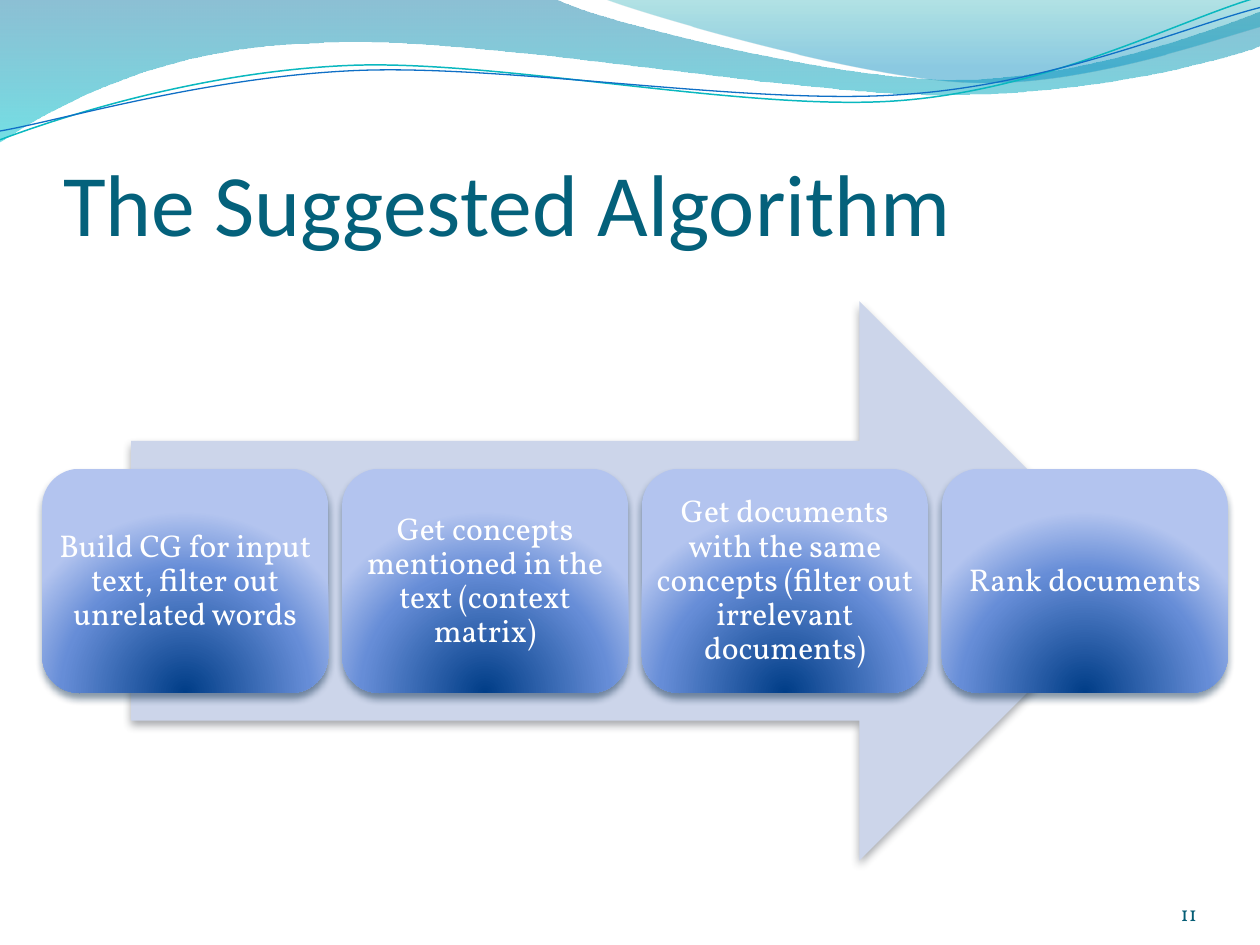
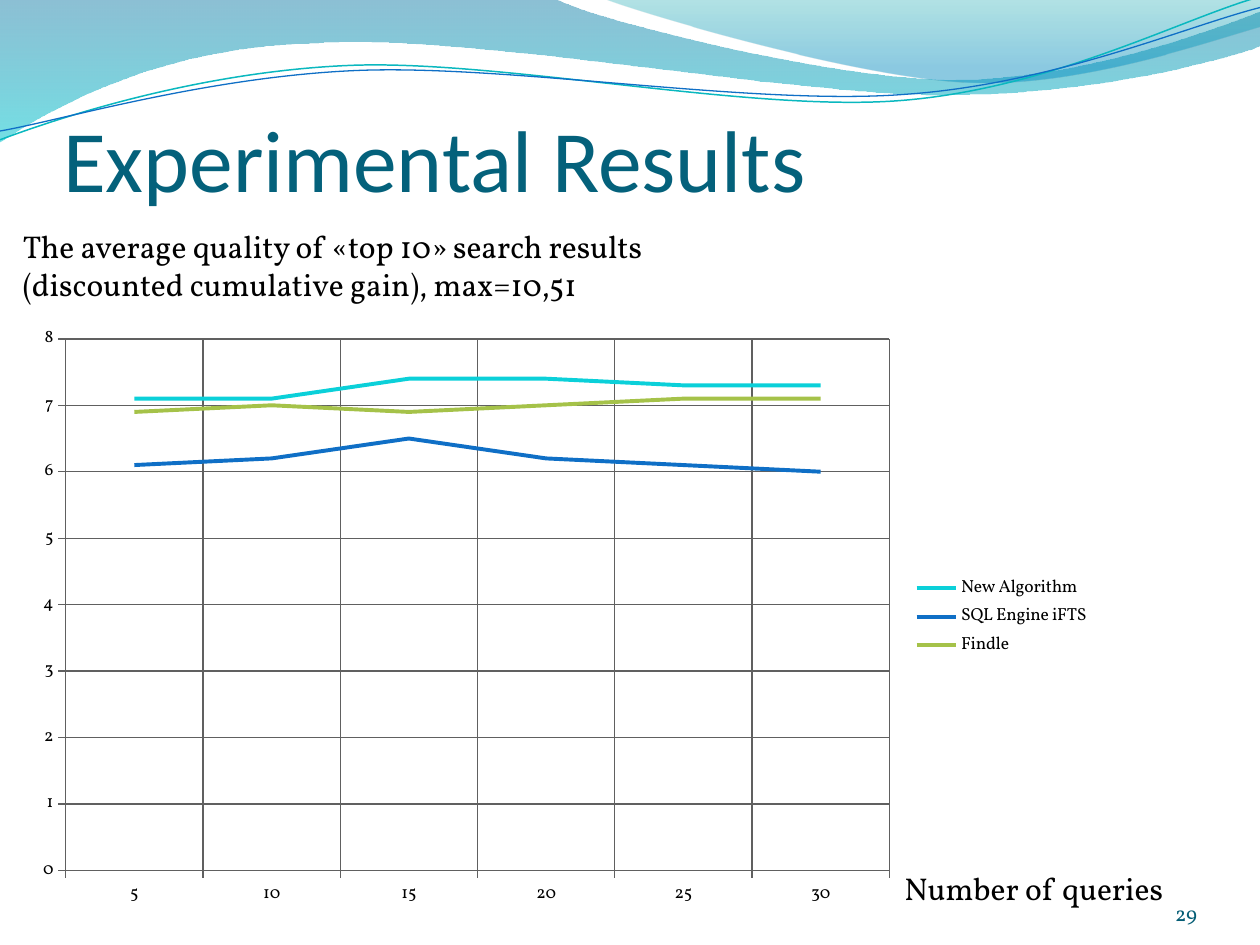
from lxml import etree
from pptx import Presentation
from pptx.chart.data import CategoryChartData
from pptx.dml.color import RGBColor
from pptx.enum.chart import XL_CHART_TYPE as CHART, XL_LEGEND_POSITION as LEGEND, XL_TICK_MARK as TICK
from pptx.enum.shapes import MSO_SHAPE as SHAPE
from pptx.enum.text import MSO_ANCHOR as ANCHOR, MSO_AUTO_SIZE as AUTO, PP_ALIGN as ALIGN
from pptx.oxml.ns import qn
from pptx.util import Inches, Pt

COLS, ROWS = 100, 75
CELL = Inches(0.1)
BODY, HEAD = "Vollkorn", "Calibri"
WHITE, BLACK, TITLE, NUMBER = "FFFFFF", "000000", "04617B", "045D75"
TEAL, BLUE, GREEN, GRID = "0BD0D9", "0F6FC6", "A5C249", "606060"

WIDE_WAVE = [
    (0, 0), (44, -0.1), (47.6, 1.7, 66.4, 6.3, 75.8, 6.3),
    (85.3, 6.3, 95.8, 2.6, 100, 0.9), (100.1, 3.6),
    (98.3, 4.4, 87, 7.6, 74.6, 7.5), (62.2, 7.5, 38.2, 2.8, 25.7, 3.4),
    (12.9, 3.6, 4.6, 8.3, -0.1, 11.3), (0, 0),
]
RIGHT_WAVE = [
    (47.9, -0.1), (50.9, 1.1, 68.2, 6.2, 76.9, 6.5),
    (85.6, 6.9, 96.1, 3.2, 100, 2.1), (100, 0), (47.9, -0.1),
]
TEAL_CURVE = [
    (0, 11.1), (4.8, 9.3, 15.8, 5.7, 27.7, 5.2),
    (39.5, 4.7, 59.3, 8.9, 71.3, 8), (83.3, 7.1, 93.8, 1.5, 99.8, -0.2),
]
BLUE_CURVE = [
    (0, 10.4), (4.7, 9.6, 16.4, 6.1, 28.3, 5.6),
    (40.3, 5.1, 59.7, 8.4, 71.7, 7.5), (83.6, 6.7, 94.1, 2.1, 100, 0.6),
]


def cells(*counts):
    return [round(n * CELL) for n in counts]


def rgb(color):
    return RGBColor.from_string(color)


def add_xml(parent, tag, **attrs):
    return etree.SubElement(parent, qn(tag), {k: str(v) for k, v in attrs.items()})


def add_color(parent, color, alpha=100):
    clr = add_xml(parent, "a:srgbClr", val=color)
    if alpha < 100:
        add_xml(clr, "a:alpha", val=alpha * 1000)


def fill_gradient(sp, stops, circle=None):
    sp.fill.background()
    spPr = sp.element.spPr
    grad = etree.Element(qn("a:gradFill"), rotWithShape="1")
    gs_lst = add_xml(grad, "a:gsLst")
    for pos, color, alpha in stops:
        add_color(add_xml(gs_lst, "a:gs", pos=pos * 1000), color, alpha)
    if circle:
        sides = {side: n * 1000 for side, n in zip("ltrb", circle)}
        add_xml(add_xml(grad, "a:path", path="circle"), "a:fillToRect", **sides)
    else:
        add_xml(grad, "a:lin", ang=5400000, scaled=1)
    spPr.replace(spPr.find(qn("a:noFill")), grad)


def cast_shadow(sp, color):
    sp.shadow.inherit = False
    effects = sp.element.spPr.find(qn("a:effectLst"))
    shadow = add_xml(effects, "a:outerShdw", blurRad=Pt(4.5), dist=Pt(3),
                     dir=5400000, rotWithShape=0)
    add_color(shadow, color, 48)


def bend_lines(sp, steps):
    lines = list(sp.element.spPr.iter(qn("a:lnTo")))
    for line, step in zip(lines, steps[1:]):
        if len(step) == 2:
            continue
        curve = etree.Element(qn("a:cubicBezTo"))
        for x, y in zip(cells(*step[::2]), cells(*step[1::2])):
            add_xml(curve, "a:pt", x=x - sp.left, y=y - sp.top)
        line.getparent().replace(line, curve)


def add_wave(slide, steps, stops=None, color=None, width=0):
    points = [cells(*step[-2:]) for step in steps]
    builder = slide.shapes.build_freeform(*points[0])
    builder.add_line_segments(points[1:], close=bool(stops))
    sp = builder.convert_to_shape()
    bend_lines(sp, steps)
    sp.shadow.inherit = False
    if stops:
        fill_gradient(sp, stops)
        sp.line.fill.background()
    else:
        sp.fill.background()
        sp.line.color.rgb = rgb(color)
        sp.line.width = Pt(width)
    return sp


def decorate_layout(layout, slide):
    waves = [
        add_wave(slide, WIDE_WAVE, [(0, "0074A1", 45), (100, "00C6CF", 55)]),
        add_wave(slide, RIGHT_WAVE, [(0, "00A1A9", 30), (80, "008BBF", 45)]),
        add_wave(slide, TEAL_CURVE, color="0AB8BF", width=0.85),
        add_wave(slide, BLUE_CURVE, color=BLUE, width=0.75),
    ]
    for shape_id, sp in enumerate(waves, 20):
        sp.element.nvSpPr.cNvPr.set("id", str(shape_id))
        layout.shapes.element.append(sp.element)


def set_margins(tf, left, top, right, bottom):
    tf.margin_left, tf.margin_top, tf.margin_right, tf.margin_bottom = cells(
        left, top, right, bottom)


def add_run(p, text, size, color, font=BODY):
    r = p.add_run()
    r.text = text
    r.font.size = Pt(size)
    r.font.name = font
    r.font.color.rgb = rgb(color)


def set_title(slide, text, top, height):
    sp = slide.shapes.title
    sp.left, sp.top, sp.width, sp.height = cells(5, top, 90, height)
    tf = sp.text_frame
    tf.auto_size = AUTO.NONE
    tf.vertical_anchor = ANCHOR.BOTTOM
    set_margins(tf, 0, 0.5, 0, 0)
    p = tf.paragraphs[0]
    p.alignment = ALIGN.LEFT
    add_run(p, text, 50, TITLE, HEAD)


def add_label(slide, lines, *box):
    tf = slide.shapes.add_textbox(*cells(*box)).text_frame
    tf.word_wrap = True
    tf.auto_size = AUTO.SHAPE_TO_FIT_TEXT
    for i, line in enumerate(lines):
        p = tf.add_paragraph() if i else tf.paragraphs[0]
        add_run(p, line, 18, BLACK)


def add_number(slide, number):
    tf = slide.shapes.add_textbox(*cells(86.7, 69.5, 8.3, 4)).text_frame
    tf.word_wrap = True
    tf.vertical_anchor = ANCHOR.BOTTOM
    set_margins(tf, 0, 0, 0, 0)
    p = tf.paragraphs[0]
    p.alignment = ALIGN.RIGHT
    add_run(p, str(number), 12, NUMBER)


def add_arrow(slide, *box):
    sp = slide.shapes.add_shape(SHAPE.RIGHT_ARROW, *cells(*box))
    sp.fill.solid()
    sp.fill.fore_color.rgb = rgb("CCD5EA")
    sp.line.fill.background()
    cast_shadow(sp, "474B53")


def add_step(slide, text, *box):
    sp = slide.shapes.add_shape(SHAPE.ROUNDED_RECTANGLE, *cells(*box))
    fill_gradient(sp, [(0, "003D87", 100), (68, "668DD7", 100), (100, "B3C4EF", 100)],
                  circle=(50, 130, 50, -30))
    sp.line.fill.background()
    cast_shadow(sp, "042747")
    tf = sp.text_frame
    tf.word_wrap = True
    tf.vertical_anchor = ANCHOR.MIDDLE
    set_margins(tf, 0, 0, 0, 0)
    p = tf.paragraphs[0]
    p.alignment = ALIGN.CENTER
    p.line_spacing = 0.9
    add_run(p, text, 18, WHITE)


def style_axis(axis):
    axis.has_major_gridlines = True
    axis.major_tick_mark = TICK.CROSS
    axis.minor_tick_mark = TICK.NONE
    for line in (axis.major_gridlines.format.line, axis.format.line):
        line.color.rgb = rgb(GRID)
        line.width = Pt(0.75)


def add_line_chart(slide, categories, series, *box):
    data = CategoryChartData()
    data.categories = categories
    for name, values, _ in series:
        data.add_series(name, values)
    chart = slide.shapes.add_chart(CHART.LINE, *cells(*box), data).chart
    chart.has_title = False
    chart.font.size = Pt(10)
    chart.font.name = BODY
    chart.font.color.rgb = rgb(BLACK)
    chart.has_legend = True
    chart.legend.position = LEGEND.RIGHT
    chart.legend.include_in_layout = False
    style_axis(chart.category_axis)
    style_axis(chart.value_axis)
    chart.value_axis.minimum_scale = 0
    chart.value_axis.maximum_scale = 8
    chart.value_axis.major_unit = 1
    plot = chart.plots[0]
    plot.vary_by_categories = False
    for ser, (_, _, color) in zip(plot.series, series):
        ser.smooth = False
        ser.format.line.color.rgb = rgb(color)
        ser.format.line.width = Pt(2.25)


def fill_algorithm(slide):
    set_title(slide, "The Suggested Algorithm", 7.7, 12.5)
    add_number(slide, 11)
    add_arrow(slide, 10.4, 23.9, 80, 44.4)
    steps = [
        "Build CG for input text, filter out unrelated words",
        "Get concepts mentioned in the text (context matrix)",
        "Get documents with the same concepts (filter out irrelevant documents)",
        "Rank documents",
    ]
    for i, step in enumerate(steps):
        add_step(slide, step, 3.35 + 23.8 * i, 37.2, 22.7, 17.8)


def fill_results(slide):
    set_title(slide, "Experimental Results", 5, 11.7)
    add_number(slide, 29)
    add_label(slide, ["The average quality of «top 10» search results",
                      "(discounted cumulative gain), max=10,51"], 0.83, 17.5, 53.3, 7.1)
    add_label(slide, ["Number of queries"], 70.8, 68.5, 24.2, 4)
    series = [
        ("New Algorithm", (7.1, 7.1, 7.4, 7.4, 7.3, 7.3), TEAL),
        ("SQL Engine iFTS", (6.1, 6.2, 6.5, 6.2, 6.1, 6), BLUE),
        ("Findle", (6.9, 7, 6.9, 7, 7.1, 7.1), GREEN),
    ]
    queries = [str(n) for n in range(5, 31, 5)]
    add_line_chart(slide, queries, series, 1.7, 25, 85.8, 47.9)


def main():
    prs = Presentation()
    prs.slide_width, prs.slide_height = cells(COLS, ROWS)
    layout = prs.slide_layouts[5]
    algorithm, results = [prs.slides.add_slide(layout) for _ in range(2)]
    decorate_layout(layout, algorithm)
    fill_algorithm(algorithm)
    fill_results(results)
    prs.save("out.pptx")


if __name__ == "__main__":
    main()
